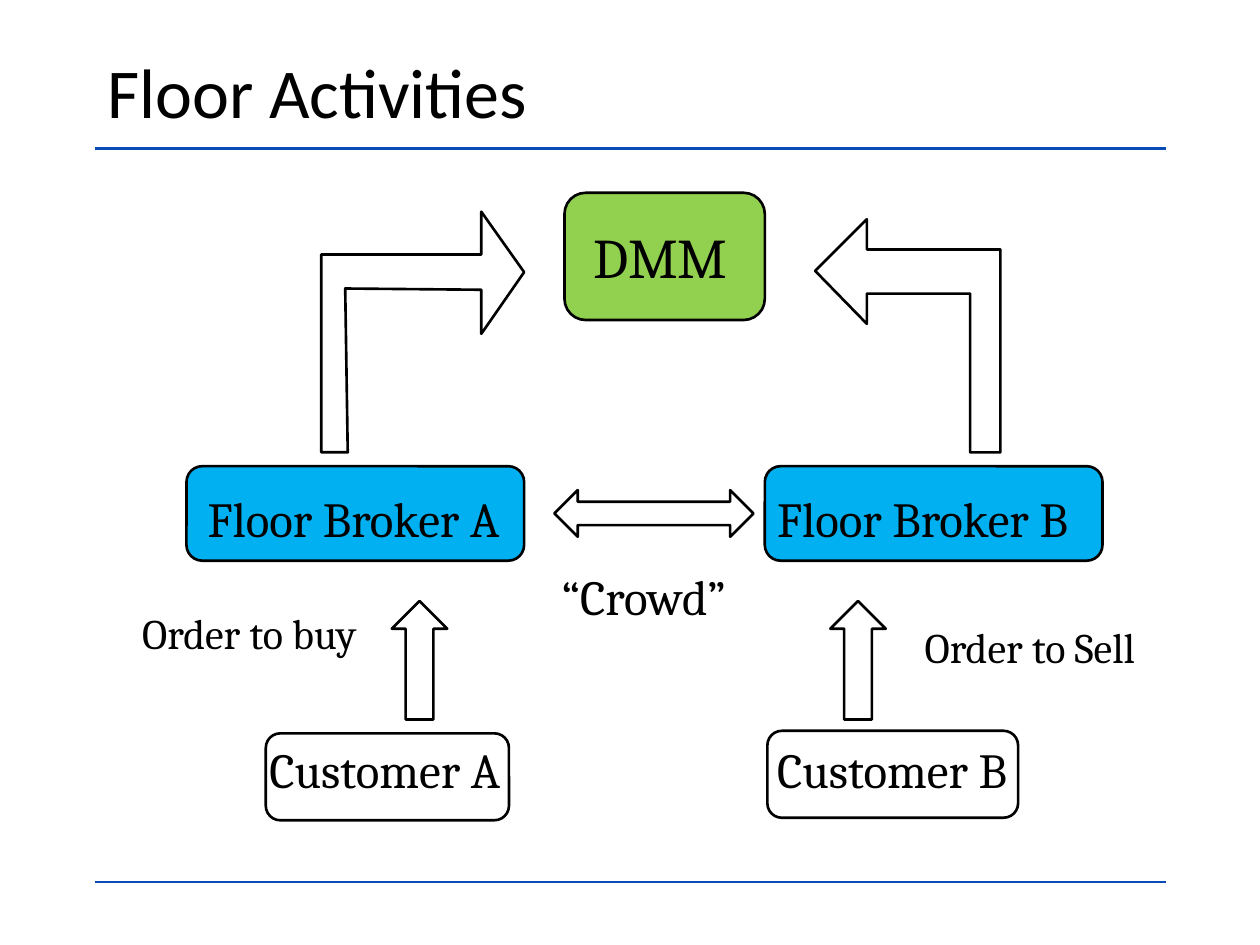
from dataclasses import dataclass

from pptx import Presentation
from pptx import util as u
from pptx.dml.color import RGBColor
from pptx.enum import shapes, text
from pptx.oxml.ns import qn
from lxml import etree

# Grid of 100 columns by 75 rows over a 10 x 7.5 inch slide
WIDTH, HEIGHT = u.Inches(10), u.Inches(7.5)
COL, ROW = WIDTH // 100, HEIGHT // 75
SHAPE = shapes.MSO_SHAPE


@dataclass(frozen=True)
class Theme:
    ink: RGBColor = RGBColor.from_string("000000")
    rule: RGBColor = RGBColor.from_string("094BB7")
    broker: RGBColor = RGBColor.from_string("00B0F0")
    dmm: RGBColor = RGBColor.from_string("92D050")
    title_font: str = "Calibri"
    body_font: str = "Cambria"
    title_size: int = 40
    dmm_size: int = 32
    label_size: int = 28
    order_size: int = 24
    line: float = 1.5


THEME = Theme()


def cells(x, y, w, h):
    """Turn columns and rows into slide lengths."""
    return [round(v) for v in (x * COL, y * ROW, w * COL, h * ROW)]


def style_text(p, font, size):
    p.alignment = text.PP_ALIGN.LEFT
    for r in p.runs:
        r.font.name = font
        r.font.size = u.Pt(size)
        r.font.color.rgb = THEME.ink


def style_shape(sp, fill=None):
    sp.shadow.inherit = False
    sp.line.color.rgb = THEME.ink
    sp.line.width = u.Pt(THEME.line)
    if fill is None:
        sp.fill.background()
    else:
        sp.fill.solid()
        sp.fill.fore_color.rgb = fill


def add_title(s, words):
    sp = s.shapes.title
    sp.left, sp.top, sp.width, sp.height = cells(7.5, 2.9, 85, 8.6)
    tf = sp.text_frame
    tf.text = words
    tf.vertical_anchor = text.MSO_ANCHOR.MIDDLE
    style_text(tf.paragraphs[0], THEME.title_font, THEME.title_size)


def add_rule(s, y):
    x, top, w, _ = cells(7.5, y, 85, 0)
    cn = s.shapes.add_connector(shapes.MSO_CONNECTOR.STRAIGHT, x, top, x + w, top)
    cn.line.color.rgb = THEME.rule
    cn.line.width = u.Pt(THEME.line)
    etree.SubElement(cn._element.spPr, qn("a:effectLst"))


def add_preset(s, kind, box, fill=None):
    style_shape(s.shapes.add_shape(kind, *cells(*box)), fill)


def add_label(s, words, box, size=THEME.label_size):
    tf = s.shapes.add_textbox(*cells(*box)).text_frame
    tf.word_wrap = True
    tf.auto_size = text.MSO_AUTO_SIZE.SHAPE_TO_FIT_TEXT
    tf.text = words
    style_text(tf.paragraphs[0], THEME.body_font, size)


def add_bent_arrow(s, points):
    # Points are in tenths of a grid cell
    fb = s.shapes.build_freeform(*points[0], scale=COL / 10)
    fb.add_line_segments(points[1:], close=True)
    style_shape(fb.convert_to_shape())


def main():
    prs = Presentation()
    prs.slide_width, prs.slide_height = WIDTH, HEIGHT
    s = prs.slides.add_slide(prs.slide_layouts[5])

    # Title and rules
    for y in (11.8, 70):
        add_rule(s, y)
    add_title(s, "Floor Activities")

    # Market maker
    add_preset(s, SHAPE.FLOWCHART_ALTERNATE_PROCESS, (44.8, 15.3, 15.9, 10.1), THEME.dmm)
    add_label(s, "DMM", (46.1, 17.2, 13.3, 6.4), THEME.dmm_size)

    # Each side: broker, customer and the order between them
    sides = [
        ("A", 14.8, (15.5, 26), (21.1, 58.2, 19.3, 6.9), 20.4, 31.1,
         "Order to buy", (10.3, 47.7)),
        ("B", 60.7, (60.7, 26.7), (60.9, 58, 19.9, 6.9), 60.7, 65.9,
         "Order to Sell", (72.4, 48.8)),
    ]
    for side, broker_x, (name_x, name_w), customer, customer_x, arrow_x, order, at in sides:
        add_preset(s, SHAPE.ROUNDED_RECTANGLE, (broker_x, 37, 26.8, 7.5), THEME.broker)
        add_label(s, f"Floor Broker {side}", (name_x, 38.3, name_w, 5.7))
        add_preset(s, SHAPE.UP_ARROW, (arrow_x, 47.7, 4.4, 9.4))
        add_label(s, order, (*at, 20.7, 5), THEME.order_size)
        add_preset(s, SHAPE.ROUNDED_RECTANGLE, customer)
        add_label(s, f"Customer {side}", (customer_x, 58.2, 21.2, 5.7))

    # Crowd between the brokers
    add_preset(s, SHAPE.LEFT_RIGHT_ARROW, (44, 38.9, 15.8, 3.7))
    add_label(s, "“Crowd”", (43.6, 44.5, 16.2, 5.7))

    # Bent arrows from the brokers to the market maker
    add_bent_arrow(s, [(416, 216), (382, 265), (382, 230), (274, 229), (276, 359),
                       (255, 359), (255, 202), (382, 202), (382, 168)])
    add_bent_arrow(s, [(794, 359), (770, 359), (770, 233), (688, 233), (688, 257),
                       (647, 215), (688, 174), (688, 198), (794, 198)])

    prs.save("out.pptx")


if __name__ == "__main__":
    main()
